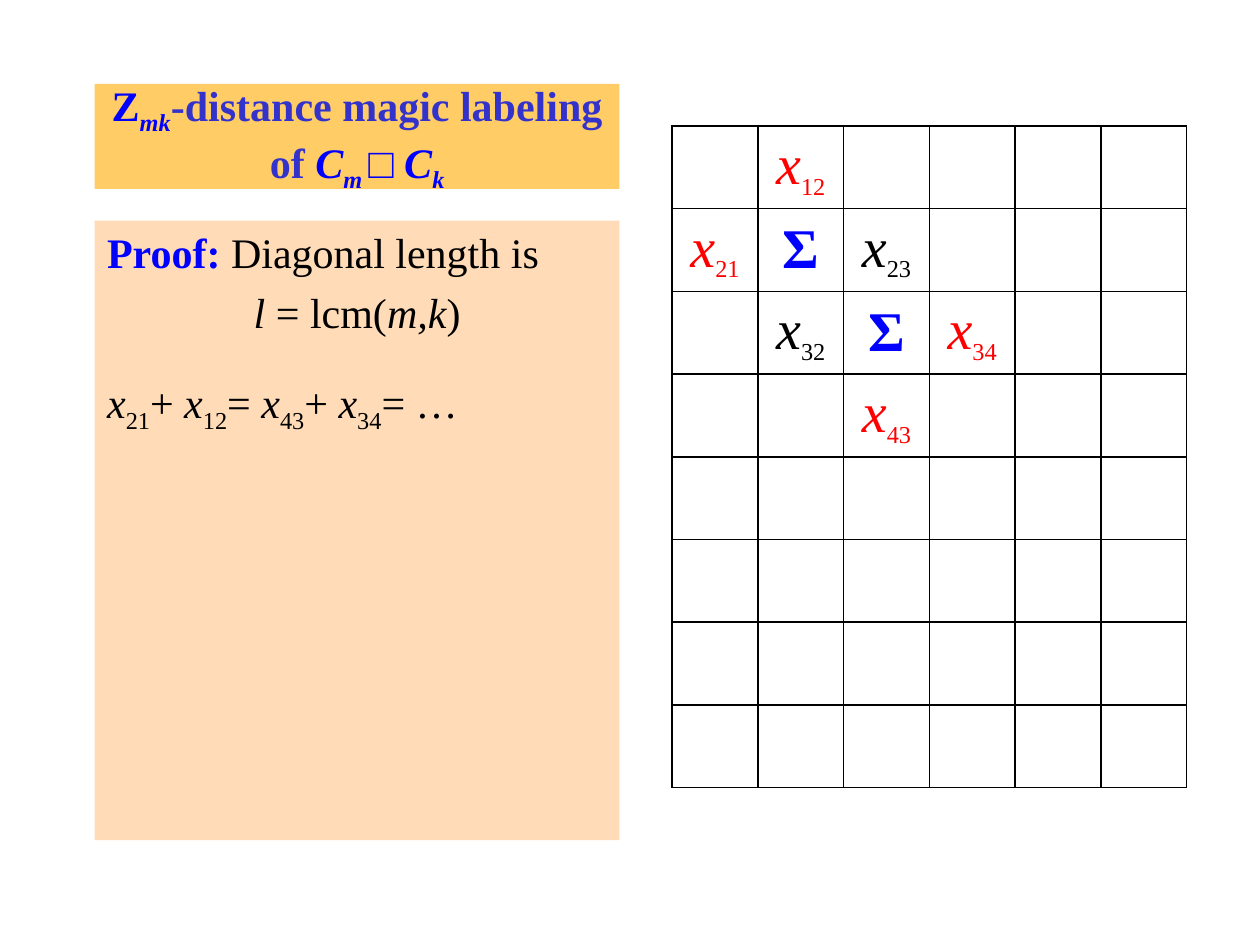
import pptx
import pptx.util
import pptx.dml.color
import pptx.enum.shapes
import pptx.enum.text
import pptx.oxml
import pptx.oxml.ns

Cm, Pt = pptx.util.Cm, pptx.util.Pt
ALIGN = pptx.enum.text.PP_ALIGN
ANCHOR = pptx.enum.text.MSO_ANCHOR

COLORS = {"gold": "FFCC66", "peach": "FFDBB7", "blue": "0000FF",
          "indigo": "3333CC", "black": "000000", "red": "FF0000"}

STYLES = {
    "plain": {},
    "bold": {"bold": True},
    "italic": {"italic": True},
    "bold italic": {"bold": True, "italic": True},
}

TITLE = [
    ("Z", "bold", "blue", False),
    ("mk", "bold italic", "blue", True),
    ("-distance magic labeling of ", "bold", "indigo", False),
    ("C", "bold italic", "blue", False),
    ("m ", "bold italic", "blue", True),
    ("□ ", "plain", "blue", False),
    ("C", "bold italic", "blue", False),
    ("k", "bold italic", "blue", True),
]
STATEMENT = [("Proof: ", "bold", "blue", False),
             ("Diagonal length is", "plain", "black", False)]
LENGTH = [("l", "italic", "black", False), (" = lcm(", "plain", "black", False),
          ("m,k", "italic", "black", False), (")", "plain", "black", False)]
SUMS = [("x", "21", "+"), (" x", "12", "="), (" x", "43", "+"), (" x", "34", "= …")]
EQUATION = [run for variable, index, sign in SUMS for run in (
    (variable, "italic", "black", False),
    (index, "plain", "black", True),
    (sign, "plain", "black", False))]

PANELS = [
    {"top": 1.69, "height": 2.12, "fill": "gold", "anchor": ANCHOR.MIDDLE,
     "lines": [(TITLE, ALIGN.CENTER, 0)]},
    {"top": 4.45, "height": 12.49, "fill": "peach", "anchor": ANCHOR.TOP,
     "lines": [(STATEMENT, ALIGN.LEFT, 5.5), (LENGTH, ALIGN.CENTER, 5.5),
               (EQUATION, ALIGN.LEFT, 22.5)]},
]
PANEL_LEFT, PANEL_WIDTH = 1.91, 10.58

ROWS, COLUMNS = 8, 6
GRID_LEFT, GRID_TOP, GRID_WIDTH, GRID_HEIGHT = 13.55, 2.54, 10.37, 13.34
LABELS = {(1, 2): "red", (2, 1): "red", (2, 3): "black",
          (3, 2): "black", (3, 4): "red", (4, 3): "red"}
CENTERS = [(2, 2), (3, 3)]
CELL_FORMAT = {"vertical_anchor": ANCHOR.MIDDLE, "margin_left": Cm(0.13),
               "margin_right": Cm(0.13), "margin_top": Cm(0.13),
               "margin_bottom": Cm(0.13)}


def rgb(name):
    return pptx.dml.color.RGBColor.from_string(COLORS[name])


def apply(target, values):
    for name, value in values.items():
        setattr(target, name, value)


def add_run(paragraph, text, style, color, subscript, size=24):
    run = paragraph.add_run()
    run.text = text
    apply(run.font, {"name": "Times New Roman", "size": Pt(size),
                     "bold": False, "italic": False, **STYLES[style]})
    run.font.color.rgb = rgb(color)
    if subscript:
        run._r.get_or_add_rPr().set("baseline", "-25000")


def add_panel(slide, panel):
    box = slide.shapes.add_shape(
        pptx.enum.shapes.MSO_SHAPE.RECTANGLE, Cm(PANEL_LEFT), Cm(panel["top"]),
        Cm(PANEL_WIDTH), Cm(panel["height"]))
    box.shadow.inherit = False
    box.fill.solid()
    box.fill.fore_color.rgb = rgb(panel["fill"])
    box.line.fill.background()
    frame = box.text_frame
    apply(frame, {"word_wrap": True, "vertical_anchor": panel["anchor"]})
    for number, (runs, alignment, space) in enumerate(panel["lines"]):
        paragraph = frame.add_paragraph() if number else frame.paragraphs[0]
        apply(paragraph, {"alignment": alignment, "space_before": Pt(space)})
        for run in runs:
            add_run(paragraph, *run)


def add_borders(cell):
    properties = cell._tc.get_or_add_tcPr()
    for position, side in enumerate(("lnL", "lnR", "lnT", "lnB")):
        properties.insert(position, pptx.oxml.parse_xml(
            f'<a:{side} {pptx.oxml.ns.nsdecls("a")} w="12700"><a:solidFill>'
            f'<a:srgbClr val="{COLORS["black"]}"/></a:solidFill></a:{side}>'))


def add_grid(slide):
    grid = slide.shapes.add_table(ROWS, COLUMNS, Cm(GRID_LEFT), Cm(GRID_TOP),
                                  Cm(GRID_WIDTH), Cm(GRID_HEIGHT)).table
    apply(grid, {"first_row": False, "horz_banding": False})
    for row in range(1, ROWS + 1):
        for column in range(1, COLUMNS + 1):
            cell = grid.cell(row - 1, column - 1)
            apply(cell, CELL_FORMAT)
            cell.fill.background()
            add_borders(cell)
            paragraph = cell.text_frame.paragraphs[0]
            paragraph.alignment = ALIGN.CENTER
            if (row, column) in CENTERS:
                add_run(paragraph, "Σ", "bold", "blue", False, 32)
            elif (row, column) in LABELS:
                color = LABELS[row, column]
                add_run(paragraph, "x", "italic", color, False, 32)
                add_run(paragraph, f"{row}{column}", "plain", color, True)


def main():
    deck = pptx.Presentation()
    apply(deck, {"slide_width": Cm(25.4), "slide_height": Cm(19.05)})
    slide = deck.slides.add_slide(deck.slide_layouts[6])
    for panel in PANELS:
        add_panel(slide, panel)
    add_grid(slide)
    deck.save("out.pptx")


if __name__ == "__main__":
    main()
